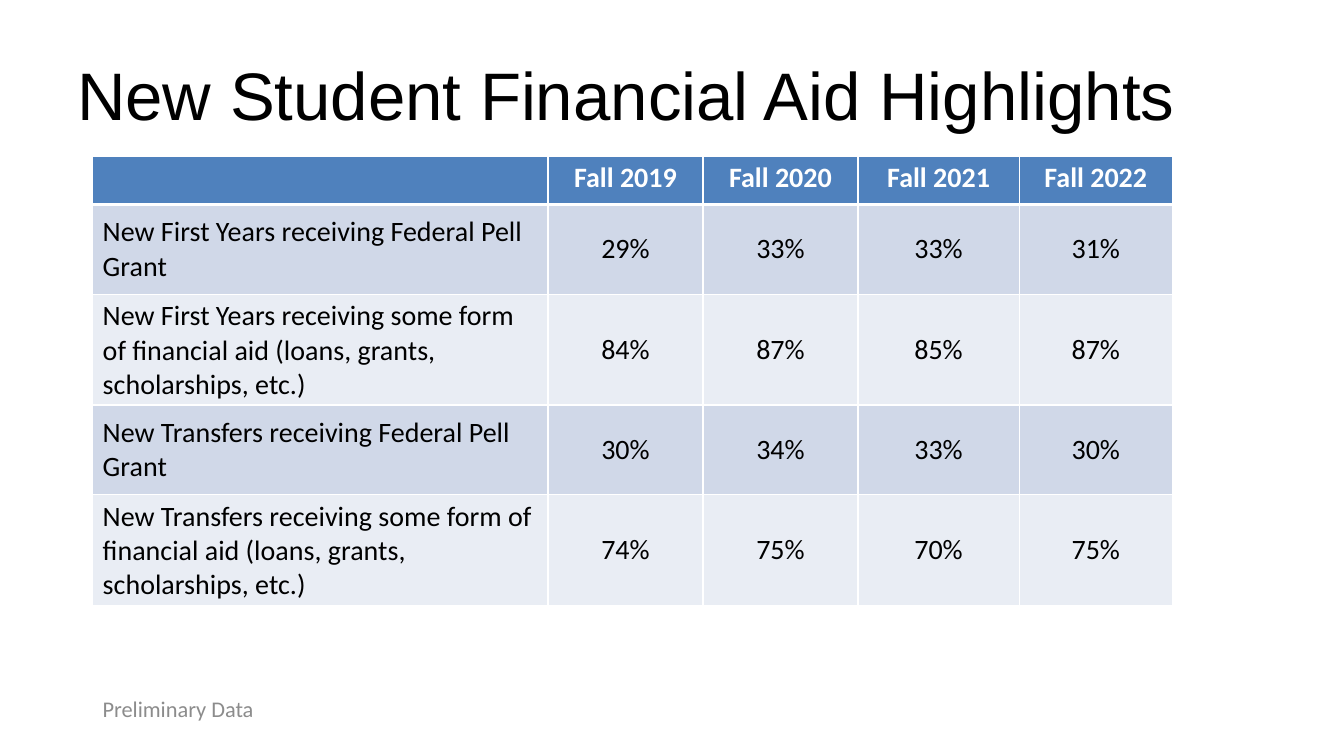
from lxml.etree import SubElement
from pptx import Presentation
from pptx.dml.color import RGBColor
from pptx.enum.text import MSO_ANCHOR, PP_ALIGN
from pptx.oxml.ns import qn
from pptx.util import Pt

TITLE = "New Student Financial Aid Highlights"
FOOTNOTE = "Preliminary Data"
ROWS = [
    ("", "Fall 2019", "Fall 2020", "Fall 2021", "Fall 2022"),
    ("New First Years receiving Federal Pell Grant", "29%", "33%", "33%", "31%"),
    ("New First Years receiving some form of financial aid (loans, grants, scholarships, etc.)",
     "84%", "87%", "85%", "87%"),
    ("New Transfers receiving Federal Pell Grant", "30%", "34%", "33%", "30%"),
    ("New Transfers receiving some form of financial aid (loans, grants, scholarships, etc.)",
     "74%", "75%", "70%", "75%"),
]
COLUMN_WIDTHS = [325.3, 110.7, 110.7, 115.2, 109.4]
ROW_HEIGHTS = [34.5, 64, 79.2, 64, 79.2]

BLACK = RGBColor(0x00, 0x00, 0x00)
WHITE = RGBColor(0xFF, 0xFF, 0xFF)
GRAY = RGBColor(0x8C, 0x8C, 0x8C)
HEADER_BLUE = RGBColor(0x4F, 0x81, 0xBD)
BANDS = [RGBColor(0xE9, 0xED, 0xF4), RGBColor(0xD0, 0xD8, 0xE8)]


def style(paragraph, name, size, color, bold=False):
    font = paragraph.font
    font.name, font.size, font.bold = name, Pt(size), bold
    font.color.rgb = color


def add_text(page, text, left, top, width, height, name, size, color):
    box = page.shapes.add_textbox(Pt(left), Pt(top), Pt(width), Pt(height))
    frame = box.text_frame
    frame.word_wrap = True
    frame.vertical_anchor = MSO_ANCHOR.MIDDLE
    frame.text = text
    style(frame.paragraphs[0], name, size, color)


def add_borders(cell, top, bottom):
    """Draw white cell borders; must run before the cell is filled."""
    properties = cell._tc.get_or_add_tcPr()
    for side, width in (("L", 1), ("R", 1), ("T", top), ("B", bottom)):
        line = SubElement(properties, qn(f"a:ln{side}"), w=str(Pt(width)))
        fill = SubElement(line, qn("a:solidFill"))
        SubElement(fill, qn("a:srgbClr"), val=str(WHITE))


def add_aid_table(page, left, top):
    frame = page.shapes.add_table(len(ROWS), len(COLUMN_WIDTHS), Pt(left), Pt(top),
                                  Pt(sum(COLUMN_WIDTHS)), Pt(sum(ROW_HEIGHTS)))
    table = frame.table
    for column, width in zip(table.columns, COLUMN_WIDTHS):
        column.width = Pt(width)
    for r, (values, height) in enumerate(zip(ROWS, ROW_HEIGHTS)):
        table.rows[r].height = Pt(height)
        header = r == 0
        for c, value in enumerate(values):
            cell = table.cell(r, c)
            add_borders(cell, top=3 if r == 1 else 1, bottom=3 if header else 1)
            cell.fill.solid()
            cell.fill.fore_color.rgb = HEADER_BLUE if header else BANDS[r % 2]
            cell.vertical_anchor = MSO_ANCHOR.TOP if header else MSO_ANCHOR.MIDDLE
            cell.text = value
            para = cell.text_frame.paragraphs[0]
            para.alignment = PP_ALIGN.CENTER if c else PP_ALIGN.LEFT
            style(para, "Calibri", 20, WHITE if header else BLACK, bold=header)


def main():
    deck = Presentation()
    deck.slide_width, deck.slide_height = Pt(960), Pt(540)
    page = deck.slides.add_slide(deck.slide_layouts[6])
    add_text(page, TITLE, 48, 21.6, 864, 90, "Arial", 48, BLACK)
    add_aid_table(page, 66.2, 111.6)
    add_text(page, FOOTNOTE, 66.2, 492, 216, 28.8, "Calibri", 16, GRAY)
    deck.save("out.pptx")


if __name__ == "__main__":
    main()
